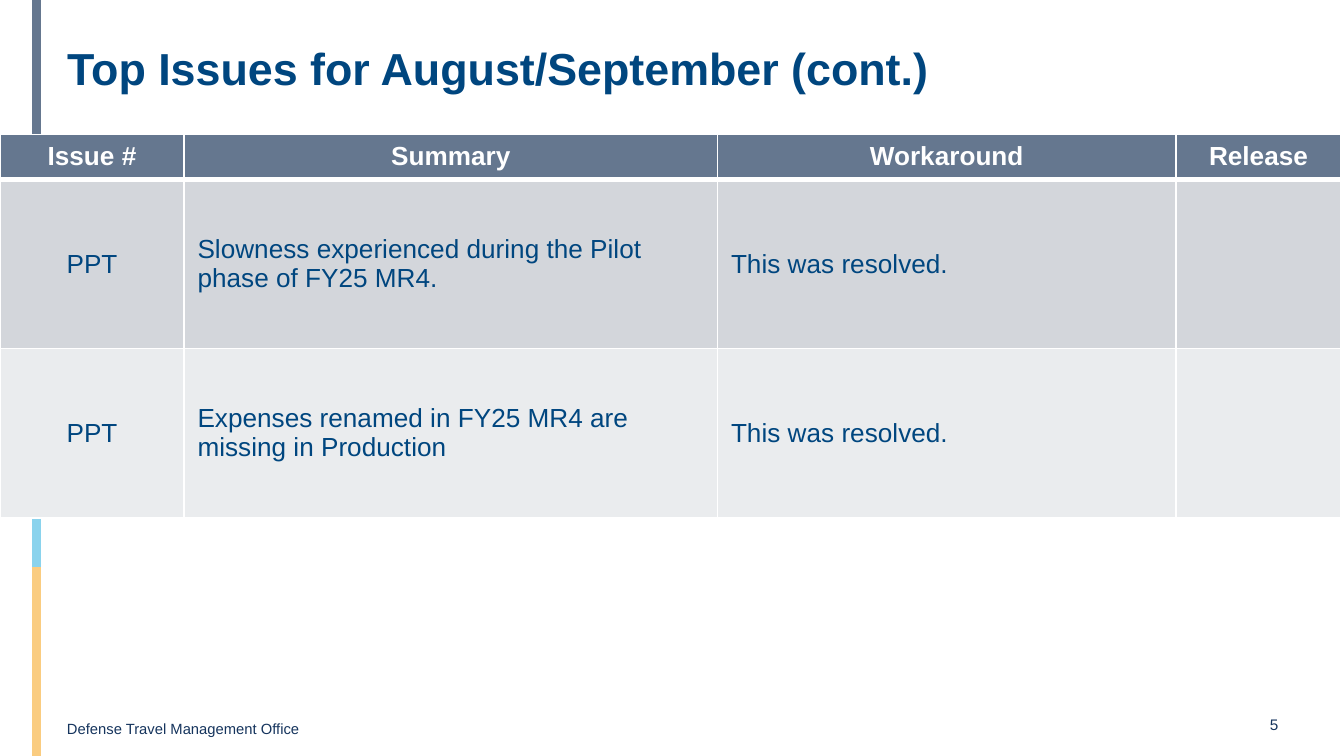
from lxml.etree import SubElement as Sub
from pptx import Presentation
from pptx.dml.color import RGBColor as RGB
from pptx.enum.shapes import MSO_CONNECTOR as Conn
from pptx.enum.text import MSO_ANCHOR as Anchor, PP_ALIGN as Align
from pptx.oxml.ns import qn
from pptx.util import Inches, Pt

WIDE = 10
HIGH = WIDE * 9 / 16
WHITE = RGB(0xFF, 0xFF, 0xFF)
SLATE = RGB(0x65, 0x77, 0x8F)
GREEN = RGB(0xAE, 0xD1, 0x82)
SKY = RGB(0x8A, 0xD3, 0xED)
GOLD = RGB(0xFA, 0xCC, 0x80)
NAVY = RGB(0x15, 0x34, 0x5D)
BLUE = RGB(0x00, 0x46, 0x7F)
BANDS = [RGB(0xD3, 0xD6, 0xDB), RGB(0xEA, 0xEC, 0xEE)]

COLS = [1.37, 3.97, 3.41, 1.23]
ROWS = [0.28, 1.26, 1.26]
HEAD = ["Issue #", "Summary", "Workaround", "Release"]
BODY = [
    ["PPT", "Slowness experienced during the Pilot phase of FY25 MR4.",
     "This was resolved.", ""],
    ["PPT", "Expenses renamed in FY25 MR4 are missing in Production",
     "This was resolved.", ""],
]


def add_run(frame, text, size, color, bold=False, align=Align.LEFT):
    para = frame.paragraphs[0]
    para.alignment = align
    run = para.add_run()
    run.text = text
    font = run.font
    font.name, font.size, font.bold = "Arial", Pt(size), bold
    font.color.rgb = color


def add_text(slide, box, pads, *args, **style):
    frame = slide.shapes.add_textbox(*map(Inches, box)).text_frame
    frame.word_wrap = True
    frame.vertical_anchor = Anchor.TOP
    (frame.margin_left, frame.margin_top,
     frame.margin_right, frame.margin_bottom) = map(Inches, pads)
    add_run(frame, *args, **style)


def add_stripe(slide, colors):
    x, step = Inches(0.27), HIGH / len(colors)
    for i, color in enumerate(colors):
        line = slide.shapes.add_connector(
            Conn.STRAIGHT, x, Inches(i * step), x, Inches((i + 1) * step))
        line.line.color.rgb = color
        line.line.width = Pt(5)
        Sub(line._element.spPr, qn("a:effectLst"))


def add_edges(cell, low):
    props = cell._tc.get_or_add_tcPr()
    for i, (side, width) in enumerate(zip("LRTB", (1, 1, 1, low))):
        edge = props.makeelement(qn(f"a:ln{side}"), {"w": str(Pt(width))})
        fill = Sub(edge, qn("a:solidFill"))
        Sub(fill, qn("a:srgbClr"), val=str(WHITE))
        props.insert(i, edge)


def add_grid(slide, top):
    grid = slide.shapes.add_table(
        len(ROWS), len(COLS), 0, Inches(top),
        Inches(sum(COLS)), Inches(sum(ROWS))).table
    for col, width in zip(grid.columns, COLS):
        col.width = Inches(width)
    for row, height in zip(grid.rows, ROWS):
        row.height = Inches(height)
    for r, words in enumerate([HEAD] + BODY):
        head = r == 0
        for c, text in enumerate(words):
            cell = grid.cell(r, c)
            cell.vertical_anchor = Anchor.MIDDLE
            cell.fill.solid()
            cell.fill.fore_color.rgb = SLATE if head else BANDS[r - 1]
            add_edges(cell, 3 if head else 1)
            if text:
                add_run(cell.text_frame, text, 14, WHITE if head else BLUE,
                        head, Align.CENTER if head or c == 0 else Align.LEFT)


def main():
    deck = Presentation()
    deck.slide_width, deck.slide_height = Inches(WIDE), Inches(HIGH)
    slide = deck.slides.add_slide(deck.slide_layouts[6])
    add_text(slide, (0.4, 5.31, 8.94, 0.23), (0.1, 0.05, 0.1, 0.05),
             "Defense Travel Management Office", 7.9, NAVY)
    add_stripe(slide, [SLATE, GREEN, SKY, GOLD])
    add_text(slide, (9.33, 5.32, 0.3, 0.19), (0, 0, 0, 0),
             "5", 8.2, NAVY, align=Align.CENTER)
    add_text(slide, (0.5, 0.3, 9.13, 0.55), (0, 0, 0, 0),
             "Top Issues for August/September (cont.)", 24, BLUE, bold=True)
    add_grid(slide, 1)
    deck.save("out.pptx")


if __name__ == "__main__":
    main()
